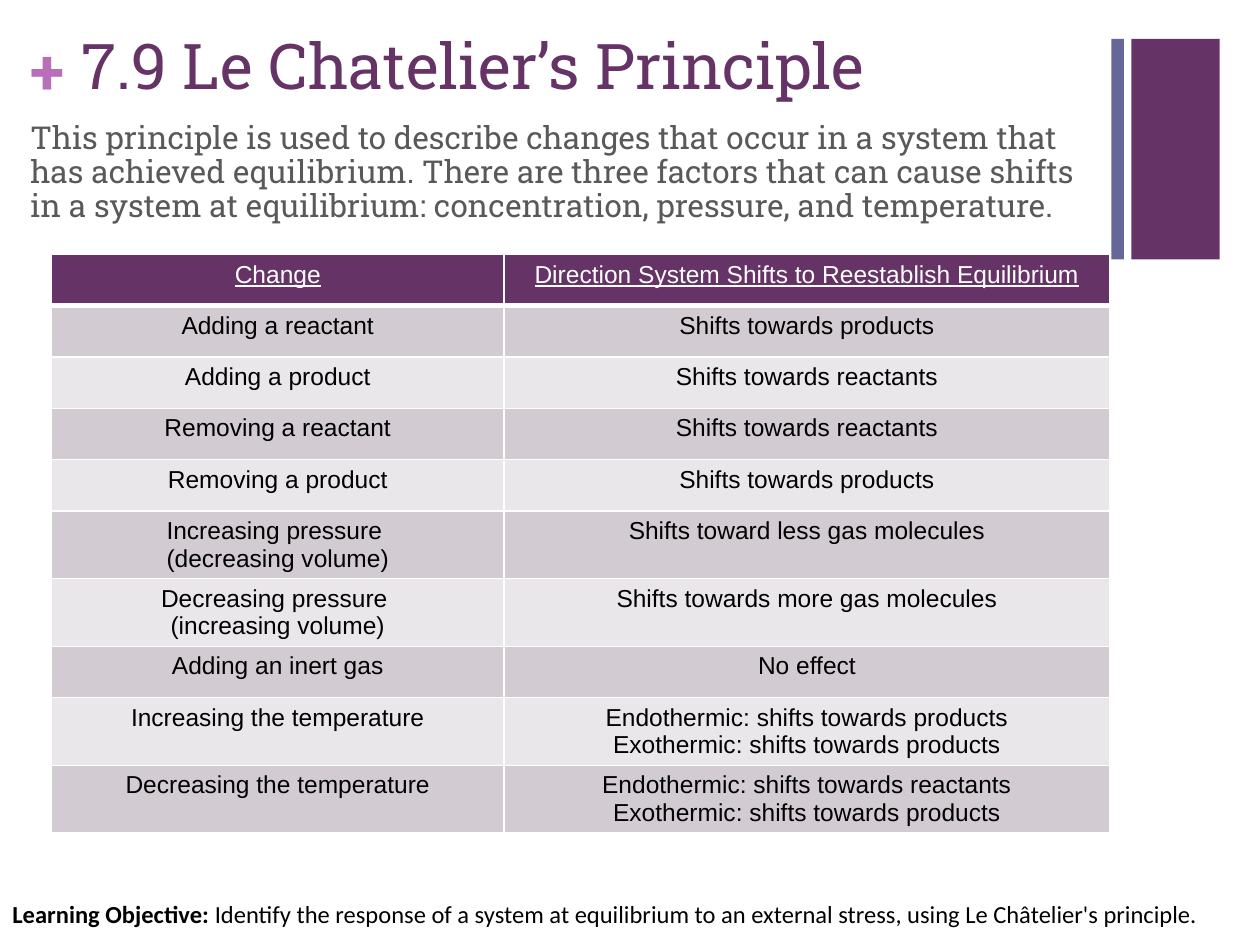
import pptx
import pptx.util
import pptx.dml.color
import pptx.enum.shapes
import pptx.enum.text
import pptx.oxml
import pptx.oxml.ns
from dataclasses import dataclass


@dataclass(frozen=True)
class Theme:
    plum: str = "663366"
    slate: str = "666699"
    pink: str = "B86EB8"
    gray: str = "595959"
    black: str = "000000"
    white: str = "FFFFFF"
    bands: tuple = ("D2CCD2", "EAE7EA")
    slab: str = "Roboto Slab"
    sans: str = "Arial"
    foot: str = "Calibri"
    big: int = 36
    mid: int = 18
    small: int = 14


T = Theme()
TITLE = "7.9 Le Chatelier’s Principle"
BODY = ("This principle is used to describe changes that occur in a system that has achieved "
        "equilibrium. There are three factors that can cause shifts in a system at equilibrium: "
        "concentration, pressure, and temperature.")
GOAL = [
    ("Learning Objective: ", True),
    ("Identify the response of a system at equilibrium to an external stress, "
     "using Le Châtelier's principle.", False),
]
HEAD = ("Change", "Direction System Shifts to Reestablish Equilibrium")
SHIFTS = [
    ("Adding a reactant", "Shifts towards products"),
    ("Adding a product", "Shifts towards reactants"),
    ("Removing a reactant", "Shifts towards reactants"),
    ("Removing a product", "Shifts towards products"),
    ("Increasing pressure \v(decreasing volume)", "Shifts toward less gas molecules"),
    ("Decreasing pressure \v(increasing volume)", "Shifts towards more gas molecules"),
    ("Adding an inert gas", "No effect"),
    ("Increasing the temperature",
     "Endothermic: shifts towards products\nExothermic: shifts towards products"),
    ("Decreasing the temperature",
     "Endothermic: shifts towards reactants\nExothermic: shifts towards products"),
]
BARS = [(89.8, 7, T.plum), (88.2, 1, T.slate)]
COLS = (35.9, 48.1)
ROW = 5.43

deck = pptx.Presentation()
deck.slide_width = pptx.util.Inches(10)
deck.slide_height = pptx.util.Inches(7.5)
slide = deck.slides.add_slide(deck.slide_layouts[1])
shapes = slide.shapes


def across(share):
    return int(deck.slide_width * share / 100)


def down(share):
    return int(deck.slide_height * share / 100)


def area(x, y, w, h):
    return across(x), down(y), across(w), down(h)


def place(shape, *box):
    shape.left, shape.top, shape.width, shape.height = area(*box)


def tint(hue):
    return pptx.dml.color.RGBColor.from_string(hue)


def paint(fill, hue):
    fill.solid()
    fill.fore_color.rgb = tint(hue)


def write(para, text, font, size, hue, bold=False, under=False):
    for i, line in enumerate(text.split("\v")):
        if i:
            para.add_line_break()
        run = para.add_run()
        run.text = line
        face = run.font
        face.name, face.size = font, pptx.util.Pt(size)
        face.bold, face.underline = bold, under
        face.color.rgb = tint(hue)


def setup(shape):
    frame = shape.text_frame
    frame.word_wrap = True
    frame.auto_size = pptx.enum.text.MSO_AUTO_SIZE.NONE
    frame.vertical_anchor = pptx.enum.text.MSO_ANCHOR.TOP
    para = frame.paragraphs[0]
    para.alignment = pptx.enum.text.PP_ALIGN.LEFT
    para.space_before = pptx.util.Pt(0)
    return frame, para


def edge(cell, side, width):
    props = cell._tc.get_or_add_tcPr()
    line = pptx.oxml.parse_xml(
        f'<a:{side} {pptx.oxml.ns.nsdecls("a")} w="{pptx.util.Pt(width)}">'
        f'<a:solidFill><a:srgbClr val="{T.white}"/></a:solidFill></a:{side}>')
    props.append(line)


def fill_cell(cell, text, row):
    top = row == 0
    for side in ("lnL", "lnR", "lnT", "lnB"):
        thick = (top and side == "lnB") or (row == 1 and side == "lnT")
        edge(cell, side, 3 if thick else 1)
    paint(cell.fill, T.plum if top else T.bands[(row - 1) % 2])
    frame = cell.text_frame
    for i, line in enumerate(text.split("\n")):
        para = frame.add_paragraph() if i else frame.paragraphs[0]
        para.alignment = pptx.enum.text.PP_ALIGN.CENTER
        write(para, line, T.sans, T.small, T.white if top else T.black, under=top)


for x, w, hue in BARS:
    bar = shapes.add_shape(pptx.enum.shapes.MSO_SHAPE.RECTANGLE, *area(x, 4.13, w, 23.33))
    bar.shadow.inherit = False
    paint(bar.fill, hue)
    bar.line.fill.background()

plus = shapes.add_textbox(*area(2.4, 3.33, 2.9, 8.13))
frame, para = setup(plus)
frame.margin_left = frame.margin_right = frame.margin_top = frame.margin_bottom = 0
write(para, "+", T.slab, T.big, T.pink, bold=True)

title = shapes.title
place(title, 5.5, 2.13, 82.6, 11.33)
frame, para = setup(title)
write(para, TITLE, T.slab, T.big, T.plum)

body = slide.placeholders[1]
place(body, 1.4, 12.27, 86.7, 13.87)
frame, para = setup(body)
para.line_spacing = 0.9
props = para._p.get_or_add_pPr()
props.set("marL", "0")
props.set("indent", "0")
props.append(pptx.oxml.parse_xml(f'<a:buNone {pptx.oxml.ns.nsdecls("a")}/>'))
write(para, BODY, T.slab, T.mid, T.gray)

goal = shapes.add_textbox(*area(0, 94.53, 100, 5.87))
frame, para = setup(goal)
for text, bold in GOAL:
    write(para, text, T.foot, T.small, T.black, bold)

rows = [HEAD] + SHIFTS
grid = shapes.add_table(
    len(rows), len(COLS), *area(4.1, 26.93, sum(COLS), ROW * len(rows))).table
for col, w in zip(grid.columns, COLS):
    col.width = across(w)
for r, texts in enumerate(rows):
    grid.rows[r].height = down(ROW)
    for c, text in enumerate(texts):
        fill_cell(grid.cell(r, c), text, r)

deck.save("out.pptx")
